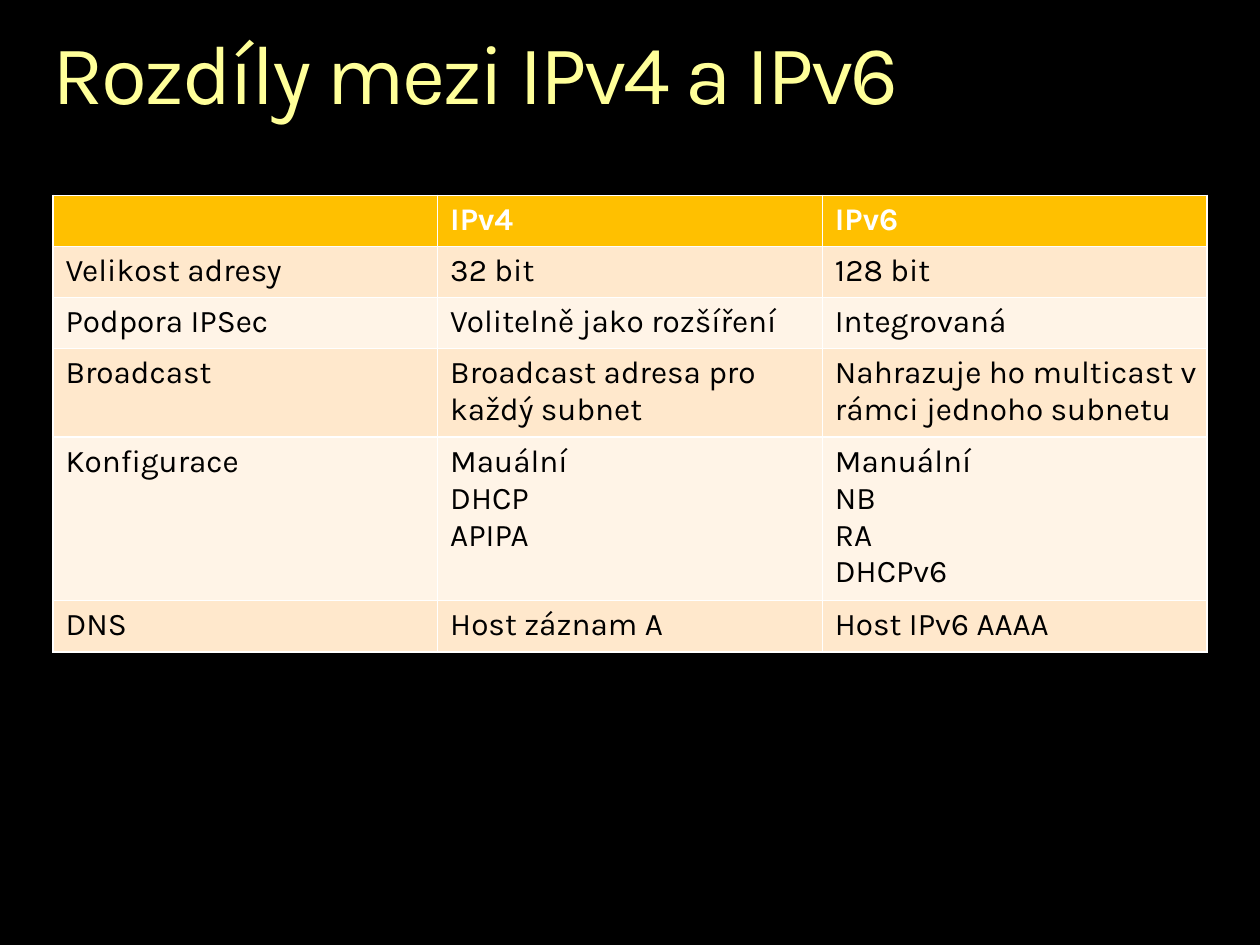
from pptx import Presentation
from pptx.dml.color import RGBColor
from pptx.util import Inches, Pt

TITLE = "Rozdíly mezi IPv4 a IPv6"
ROWS = [
    ("", "IPv4", "IPv6"),
    ("Velikost adresy", "32 bit", "128 bit"),
    ("Podpora IPSec", "Volitelně jako rozšíření", "Integrovaná"),
    ("Broadcast", "Broadcast adresa pro každý subnet",
     "Nahrazuje ho multicast v rámci jednoho subnetu"),
    ("Konfigurace", "Mauální\nDHCP\nAPIPA", "Manuální\nNB\nRA\nDHCPv6"),
    ("DNS", "Host záznam A", "Host IPv6 AAAA"),
]
HEAD, BANDS = "FFC000", ("FFF4E7", "FFE8CC")
WIDE, HIGH = 10, 7.5
EDGE = 0.42
SPAN = WIDE - 2 * EDGE
ROW = Pt(29.2)


def color(code):
    return RGBColor.from_string(code)


def style(frame, size, code, bold=False):
    for par in frame.paragraphs:
        for run in par.runs:
            font = run.font
            font.name, font.size, font.bold = "Karla", Pt(size), bold
            font.color.rgb = color(code)


def add_title(slide):
    box = slide.shapes.add_textbox(
        Inches(EDGE), Inches(0.25), Inches(SPAN), Inches(0.73))
    frame = box.text_frame
    frame.word_wrap = True
    frame.margin_left = frame.margin_right = 0
    frame.margin_top = frame.margin_bottom = 0
    frame.text = TITLE
    par = frame.paragraphs[0]
    par.line_spacing = 0.9
    style(frame, 48, "FFFF99")
    par.runs[0].font._element.set("spc", "-150")


def add_grid(slide):
    count = len(ROWS)
    table = slide.shapes.add_table(
        count, len(ROWS[0]), Inches(EDGE), Inches(1.55),
        Inches(SPAN), ROW * count).table
    for r, row in enumerate(ROWS):
        for c, text in enumerate(row):
            cell = table.cell(r, c)
            cell.margin_right = Inches(0.08)
            cell.fill.solid()
            cell.fill.fore_color.rgb = color(BANDS[r % 2] if r else HEAD)
            cell.text_frame.text = text
            style(cell.text_frame, 18, "000000" if r else "FFFFFF", r == 0)


def main():
    deck = Presentation()
    deck.slide_width, deck.slide_height = Inches(WIDE), Inches(HIGH)
    slide = deck.slides.add_slide(deck.slide_layouts[6])
    slide.background.fill.solid()
    slide.background.fill.fore_color.rgb = color("000000")
    add_title(slide)
    add_grid(slide)
    deck.save("out.pptx")


if __name__ == "__main__":
    main()
